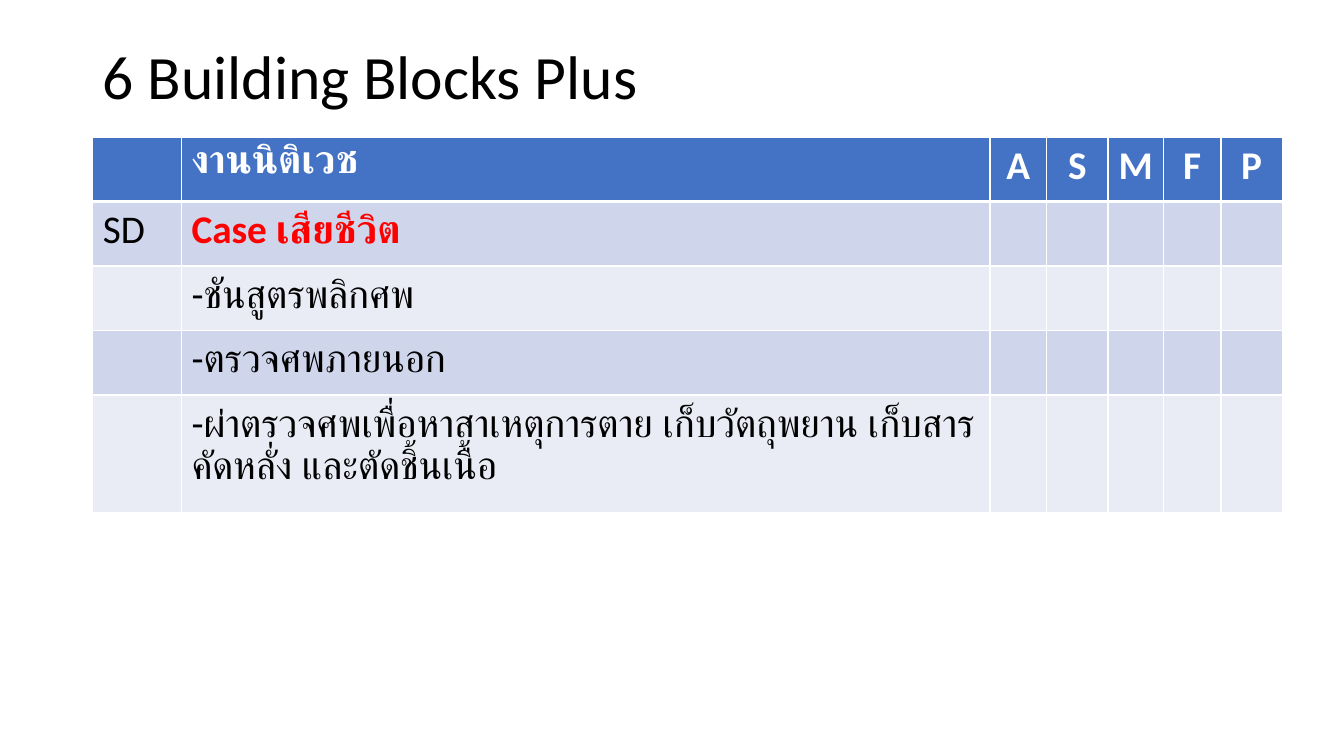
from dataclasses import dataclass

from lxml.etree import SubElement
from pptx import Presentation
from pptx.dml.color import RGBColor
from pptx.enum.text import MSO_ANCHOR as Anchor, PP_ALIGN as Align
from pptx.oxml.ns import qn
from pptx.slide import Slide
from pptx.table import _Cell as Cell
from pptx.text.text import TextFrame
from pptx.util import Inches, Pt

FONT = "Calibri"
COLORS = {
    "text": "000000",
    "light": "FFFFFF",
    "alert": "FF0000",
    "header": "4472C4",
    "odd": "CFD5EA",
    "even": "E9EBF5",
}
SLIDE_WIDTH, SLIDE_HEIGHT = 13.33, 7.5
LEFT = 0.92
COLUMNS = (0.88, 8.02, 0.56, 0.61, 0.55, 0.57, 0.61)
ROWS = (0.64, 0.64, 0.64, 0.64, 1.17)


@dataclass(frozen=True)
class TaskRow:
    cells: tuple[str, ...]
    fill: str
    color: str = "text"
    bold: bool = False
    bottom_line: float = 1


TASK_ROWS = (
    TaskRow(("", "งานนิติเวช", "A", "S", "M", "F", "P"), "header", "light", True, 3),
    TaskRow(("SD",), "odd"),
    TaskRow(("", "-ชันสูตรพลิกศพ"), "even"),
    TaskRow(("", "-ตรวจศพภายนอก"), "odd"),
    TaskRow(
        ("", "-ผ่าตรวจศพเพื่อหาสาเหตุการตาย เก็บวัตถุพยาน เก็บสารคัดหลั่ง และตัดชิ้นเนื้อ"),
        "even",
    ),
)
CASE_ROW, TASK_COLUMN = 1, 1


def write(frame: TextFrame, text: str, *, size: float, color: str = "text",
          bold: bool = False, align: Align = Align.LEFT,
          spacing: float | None = None) -> None:
    para = frame.paragraphs[0]
    para.alignment = align
    para.line_spacing = spacing
    span = para.add_run()
    span.text = text
    span.font.name = FONT
    span.font.size = Pt(size)
    span.font.bold = bold
    span.font.color.rgb = RGBColor.from_string(COLORS[color])


def paint_cell(cell: Cell, fill: str, top: float, bottom: float) -> None:
    """Give the cell its white borders, then its fill."""
    properties = cell._tc.get_or_add_tcPr()
    for side, width in (("L", 1), ("R", 1), ("T", top), ("B", bottom)):
        line = SubElement(properties, qn(f"a:ln{side}"), w=str(Pt(width)))
        solid = SubElement(line, qn("a:solidFill"))
        SubElement(solid, qn("a:srgbClr"), val=COLORS["light"])
    cell.fill.solid()
    cell.fill.fore_color.rgb = RGBColor.from_string(COLORS[fill])


def add_title(page: Slide) -> None:
    box = page.shapes.add_textbox(Inches(LEFT), Inches(0.4), Inches(11.5), Inches(0.77))
    frame = box.text_frame
    frame.word_wrap = True
    frame.vertical_anchor = Anchor.MIDDLE
    write(frame, "6 Building Blocks Plus", size=44, spacing=0.9)


def add_task_table(page: Slide) -> None:
    table = page.shapes.add_table(
        len(ROWS), len(COLUMNS), Inches(LEFT), Inches(1.36),
        Inches(sum(COLUMNS)), Inches(sum(ROWS)),
    ).table
    for column, width in zip(table.columns, COLUMNS):
        column.width = Inches(width)
    top_line = 1.0
    for row_number, (row, height, task) in enumerate(zip(table.rows, ROWS, TASK_ROWS)):
        row.height = Inches(height)
        for cell in row.cells:
            paint_cell(cell, task.fill, top_line, task.bottom_line)
        for number, text in enumerate(task.cells):
            if text:
                align = Align.CENTER if number > TASK_COLUMN else Align.LEFT
                write(table.cell(row_number, number).text_frame, text, size=28,
                      color=task.color, bold=task.bold, align=align)
        top_line = task.bottom_line
    write(table.cell(CASE_ROW, TASK_COLUMN).text_frame, "Case เสียชีวิต",
          size=28, color="alert", bold=True)


def main() -> None:
    deck = Presentation()
    deck.slide_width, deck.slide_height = Inches(SLIDE_WIDTH), Inches(SLIDE_HEIGHT)
    page = deck.slides.add_slide(deck.slide_layouts[6])
    add_title(page)
    add_task_table(page)
    deck.save("out.pptx")


if __name__ == "__main__":
    main()
